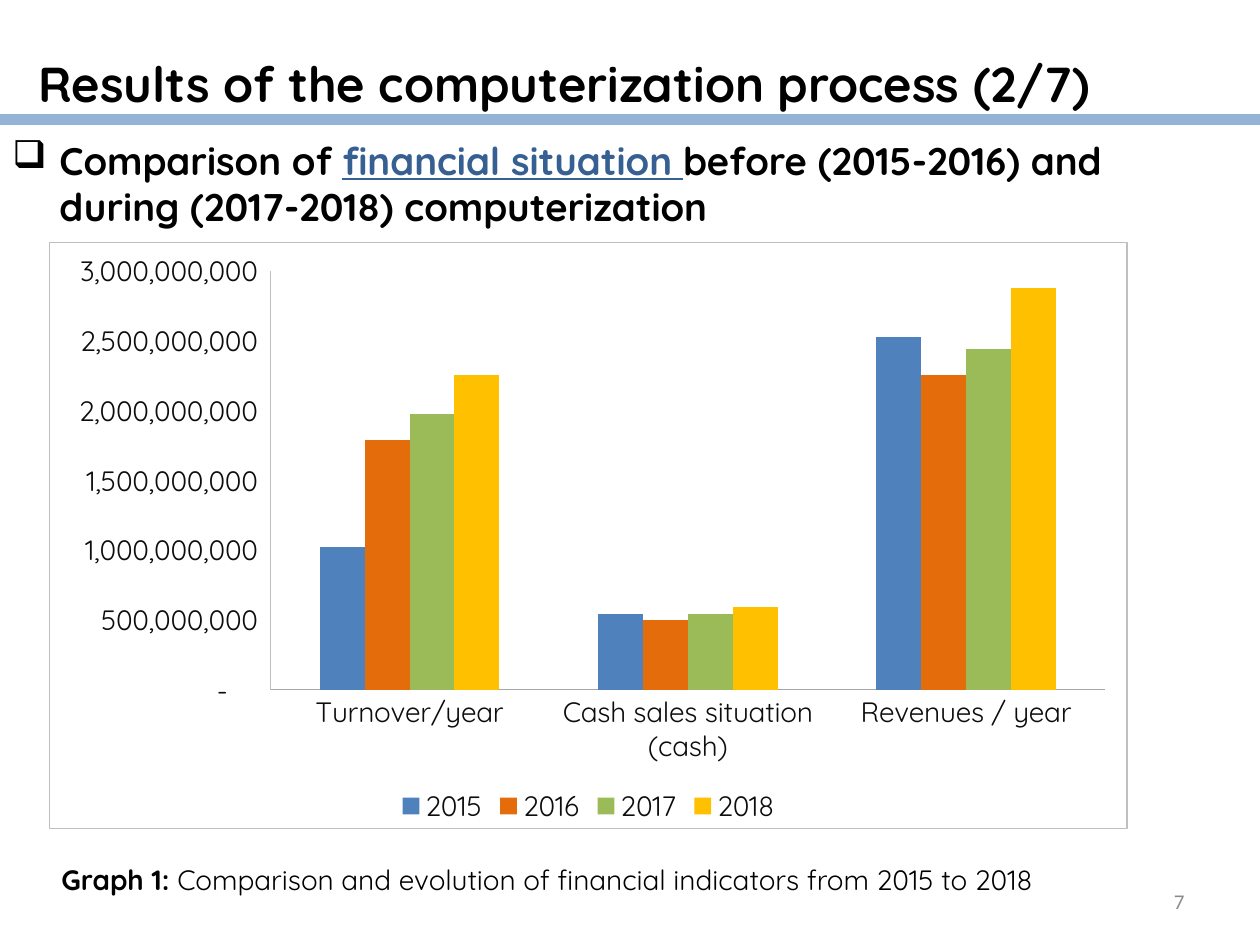
from lxml import etree
from pptx import Presentation
from pptx.chart.data import CategoryChartData
from pptx.dml.color import RGBColor
from pptx.enum.chart import XL_CHART_TYPE, XL_LEGEND_POSITION, XL_TICK_MARK
from pptx.enum.shapes import MSO_CONNECTOR
from pptx.enum.text import MSO_ANCHOR, PP_ALIGN
from pptx.oxml import parse_xml
from pptx.oxml.ns import nsdecls, qn
from pptx.util import Cm, Pt

FONT = "Quicksand"
BLACK = "000000"
CHART_TEXT = "0D0D0D"
CHART_BORDER = "BFBFBF"
CATEGORIES = ["Turnover/year", "Cash sales situation (cash)", "Revenues / year"]
# Year: (bar colour, values in millions)
YEARS = {
    "2015": ("4F81BD", (1020, 540, 2530)),
    "2016": ("E46C0A", (1790, 500, 2260)),
    "2017": ("9BBB59", (1980, 540, 2440)),
    "2018": ("FFC000", (2260, 590, 2880)),
}
MILLION = 1_000_000


def color(hex_value):
    return RGBColor.from_string(hex_value)


def style_font(font, size, hex_value, name=FONT, bold=False):
    font.name = name
    font.size = Pt(size)
    font.bold = bold
    font.color.rgb = color(hex_value)


def add_text(slide, left, top, width, height, spans, size, name=FONT,
             anchor=MSO_ANCHOR.MIDDLE):
    """Add a one-paragraph box; each span is (text, colour, bold, underline)."""
    box = slide.shapes.add_textbox(Cm(left), Cm(top), Cm(width), Cm(height))
    box.text_frame.word_wrap = True
    box.text_frame.vertical_anchor = anchor
    para = box.text_frame.paragraphs[0]
    for text, hex_value, bold, underline in spans:
        span = para.add_run()
        span.text = text
        style_font(span.font, size, hex_value, name, bold)
        span.font.underline = underline
    return para


def add_bullet(para, symbol, indent):
    properties = para._p.get_or_add_pPr()
    properties.set("marL", str(Cm(indent)))
    properties.set("indent", str(-Cm(indent)))
    etree.SubElement(properties, qn("a:buChar")).set("char", symbol)


def add_rule(slide, top, width, hex_value, weight):
    rule = slide.shapes.add_connector(
        MSO_CONNECTOR.STRAIGHT, 0, Cm(top), Cm(width), Cm(top))
    rule.line.color.rgb = color(hex_value)
    rule.line.width = Pt(weight)
    etree.SubElement(rule._element.spPr, qn("a:effectLst"))


def style_axis(axis, line_color):
    axis.has_major_gridlines = False
    axis.major_tick_mark = XL_TICK_MARK.NONE
    axis.minor_tick_mark = XL_TICK_MARK.NONE
    axis.format.line.color.rgb = color(line_color)
    axis.format.line.width = Pt(0.75)
    style_font(axis.tick_labels.font, 16, CHART_TEXT)


def add_border(chart, hex_value, weight):
    border = parse_xml(
        f'<c:spPr {nsdecls("c", "a")}><a:noFill/><a:ln w="{Pt(weight)}">'
        f'<a:solidFill><a:srgbClr val="{hex_value}"/></a:solidFill>'
        '</a:ln></c:spPr>')
    chart._chartSpace.find(qn("c:chart")).addnext(border)


def add_column_chart(slide, left, top, width, height):
    data = CategoryChartData()
    data.categories = CATEGORIES
    for year, (_, values) in YEARS.items():
        data.add_series(year, [value * MILLION for value in values])
    chart = slide.shapes.add_chart(
        XL_CHART_TYPE.COLUMN_CLUSTERED,
        Cm(left), Cm(top), Cm(width), Cm(height), data).chart
    chart.has_title = False
    style_font(chart.font, 16, CHART_TEXT)
    add_border(chart, CHART_BORDER, 0.75)

    # Columns
    plot = chart.plots[0]
    plot.gap_width = 219
    plot.overlap = 0
    plot.vary_by_categories = False
    for series, (hex_value, _) in zip(plot.series, YEARS.values()):
        series.format.fill.solid()
        series.format.fill.fore_color.rgb = color(hex_value)

    # Axes
    style_axis(chart.category_axis, "A6A6A6")
    style_axis(chart.value_axis, CHART_BORDER)
    chart.value_axis.minimum_scale = 0
    chart.value_axis.maximum_scale = 3000 * MILLION
    chart.value_axis.major_unit = 500 * MILLION
    labels = chart.value_axis.tick_labels
    labels.number_format = r'_(* #,##0_);_(* \(#,##0\);_(* "-"??_);_(@_)'
    labels.number_format_is_linked = False

    # Legend
    chart.has_legend = True
    chart.legend.position = XL_LEGEND_POSITION.BOTTOM
    chart.legend.include_in_layout = False
    style_font(chart.legend.font, 16, CHART_TEXT)


def main():
    deck = Presentation()
    deck.slide_width, deck.slide_height = Cm(25.4), Cm(19.05)
    slide = deck.slides.add_slide(deck.slide_layouts[6])

    # Title and rule
    title = add_text(
        slide, 0.53, 0.38, 23.6, 1.98,
        [("Results of the computerization process (2/7)", BLACK, True, False)], 28)
    title.line_spacing = 1.5
    title.space_before = Pt(6)
    add_rule(slide, 2.41, 25.4, "95B3D7", 6)

    # Heading
    heading = add_text(slide, 0, 2.62, 24.82, 2.13, [
        ("Comparison of ", BLACK, True, False),
        ("financial situation ", "376092", True, True),
        ("before (2015-2016) and during (2017-2018) computerization",
         BLACK, True, False),
    ], 22)
    add_bullet(heading, "❑", 0.95)

    # Chart and caption
    add_column_chart(slide, 0.99, 4.88, 21.74, 11.84)
    add_text(slide, 0.99, 17.27, 22.07, 0.94, [
        ("Graph 1: ", BLACK, True, False),
        ("Comparison and evolution of financial indicators from 2015 to 2018",
         BLACK, False, False),
    ], 16, anchor=MSO_ANCHOR.TOP)

    # Page number
    number = add_text(slide, 18.21, 17.65, 5.92, 1.02,
                      [("7", "8C8C8C", False, False)], 12, name="Calibri")
    number.alignment = PP_ALIGN.RIGHT

    deck.save("out.pptx")


if __name__ == "__main__":
    main()
